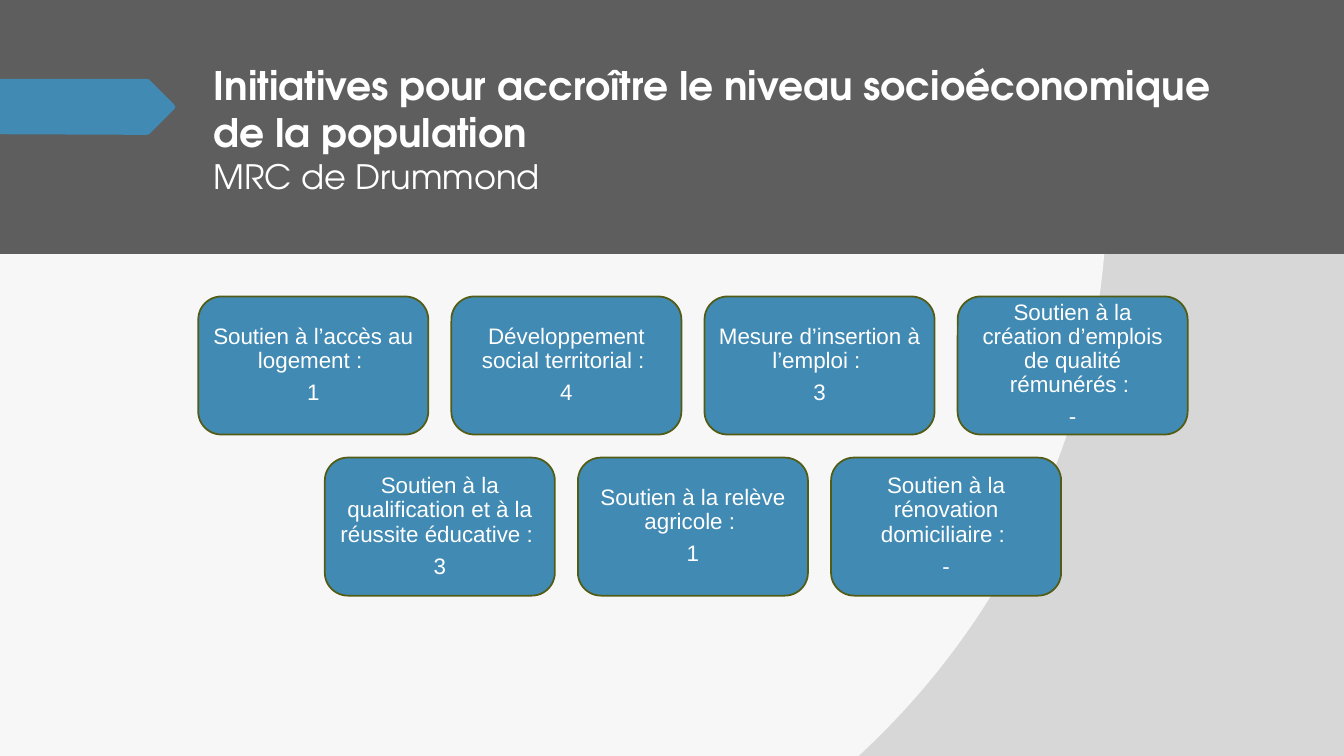
from copy import deepcopy
from dataclasses import dataclass

from pptx import Presentation
from pptx.dml.color import RGBColor
from pptx.enum.shapes import MSO_SHAPE
from pptx.enum.text import MSO_ANCHOR, MSO_AUTO_SIZE, PP_ALIGN
from pptx.oxml import parse_xml
from pptx.oxml.ns import nsdecls, qn
from pptx.shapes.autoshape import Shape
from pptx.slide import Slide
from pptx.text.text import _Paragraph, _Run
from pptx.util import Pt

COLORS = {
    "light": "F7F7F7",
    "shade": "D7D7D7",
    "banner": "5E5E5E",
    "accent": "418AB3",
    "outline": "535C14",
    "text": "FFFFFF",
}
TITLE_FONT = "TeX Gyre Adventor"
CARD_FONT = "Arial"

CARD_WIDTH, CARD_HEIGHT = 164.3, 98.6
CARD_GAP = 16.5
ROWS_CENTER, ROWS_TOP = 495, 211.8


@dataclass(frozen=True)
class Initiative:
    label: str
    count: str


INITIATIVE_ROWS = [
    [
        Initiative("Soutien à l’accès au logement : ", "1"),
        Initiative("Développement social territorial : ", "4"),
        Initiative("Mesure d’insertion à l’emploi : ", "3"),
        Initiative("Soutien à la création d’emplois de qualité rémunérés : ", "-"),
    ],
    [
        Initiative("Soutien à la qualification et à la réussite éducative : ", "3"),
        Initiative("Soutien à la relève agricole : ", "1"),
        Initiative("Soutien à la rénovation domiciliaire : ", "-"),
    ],
]

ARROW_OUTLINE = [
    (0, 56.3), (105, 56.3), (106.6, 56.9), (124.6, 74.9), (125.2, 76.3),
    (124.6, 77.8), (106.6, 95.8), (105, 96.3), (98, 96.3), (0, 95.9),
]


def rgb(name: str) -> RGBColor:
    return RGBColor.from_string(COLORS[name])


def paint(shape: Shape, fill: str) -> None:
    shape.shadow.inherit = False
    shape.fill.solid()
    shape.fill.fore_color.rgb = rgb(fill)
    shape.line.fill.background()


def add_text(paragraph: _Paragraph, text: str, font: str, size: float, bold: bool = False) -> _Run:
    run = paragraph.add_run()
    run.text = text
    run.font.name = font
    run.font.size = Pt(size)
    run.font.bold = bold
    run.font.color.rgb = rgb("text")
    return run


def set_background(slide: Slide) -> None:
    slide.background.fill.solid()
    solid = next(slide.element.iter(qn("a:solidFill")))
    gradient = parse_xml(
        f'<a:gradFill {nsdecls("a")} rotWithShape="1"><a:gsLst>'
        f'<a:gs pos="100000"><a:srgbClr val="{COLORS["light"]}"/></a:gs>'
        f'<a:gs pos="100000"><a:srgbClr val="{COLORS["shade"]}"/></a:gs>'
        '</a:gsLst><a:path path="circle">'
        '<a:fillToRect l="50000" t="50000" r="100000" b="100000"/>'
        '</a:path></a:gradFill>'
    )
    solid.getparent().replace(solid, gradient)


def add_banner(slide: Slide, width: float) -> None:
    banner = slide.shapes.add_shape(MSO_SHAPE.RECTANGLE, 0, 0, Pt(width), Pt(181.4))
    paint(banner, "banner")
    slide.shapes.title.element.addprevious(banner.element)


def fill_title(slide: Slide) -> None:
    title = slide.shapes.title
    title.left, title.top, title.width, title.height = Pt(145.4), Pt(40.3), Pt(738.7), Pt(114.5)
    frame = title.text_frame
    frame.auto_size = MSO_AUTO_SIZE.NONE
    frame.vertical_anchor = MSO_ANCHOR.TOP
    frame.word_wrap = True
    heading = frame.paragraphs[0]
    heading.alignment = PP_ALIGN.LEFT
    add_text(heading, "Initiatives pour accroître le niveau socioéconomique de la population",
             TITLE_FONT, 28, bold=True)
    heading.add_line_break()
    line_break = next(title.element.iter(qn("a:br")))
    line_break.append(deepcopy(next(title.element.iter(qn("a:rPr")))))
    add_text(heading, "MRC de Drummond", TITLE_FONT, 24)


def add_arrow(slide: Slide) -> None:
    start, *others = [(Pt(x), Pt(y)) for x, y in ARROW_OUTLINE]
    builder = slide.shapes.build_freeform(*start)
    builder.add_line_segments(others, close=True)
    paint(builder.convert_to_shape(), "accent")


def add_card(slide: Slide, initiative: Initiative, left: float, top: float) -> None:
    card = slide.shapes.add_shape(
        MSO_SHAPE.ROUNDED_RECTANGLE, Pt(left), Pt(top), Pt(CARD_WIDTH), Pt(CARD_HEIGHT))
    paint(card, "accent")
    card.line.color.rgb = rgb("outline")
    card.line.width = Pt(1.25)
    frame = card.text_frame
    frame.word_wrap = True
    frame.vertical_anchor = MSO_ANCHOR.MIDDLE
    frame.margin_left = frame.margin_right = frame.margin_top = frame.margin_bottom = Pt(4.8)
    for paragraph, text in (
        (frame.paragraphs[0], initiative.label),
        (frame.add_paragraph(), initiative.count),
    ):
        paragraph.alignment = PP_ALIGN.CENTER
        paragraph.line_spacing = 0.9
        paragraph.space_after = Pt(5.6)
        add_text(paragraph, text, CARD_FONT, 16)


def add_cards(slide: Slide) -> None:
    for row_index, row in enumerate(INITIATIVE_ROWS):
        row_width = len(row) * (CARD_WIDTH + CARD_GAP) - CARD_GAP
        row_left = ROWS_CENTER - row_width / 2
        top = ROWS_TOP + row_index * (CARD_HEIGHT + CARD_GAP)
        for column, initiative in enumerate(row):
            add_card(slide, initiative, row_left + column * (CARD_WIDTH + CARD_GAP), top)


def main() -> None:
    presentation = Presentation()
    presentation.slide_width, presentation.slide_height = Pt(960), Pt(540)
    slide = presentation.slides.add_slide(presentation.slide_layouts.get_by_name("Title Only"))
    set_background(slide)
    add_banner(slide, 960)
    fill_title(slide)
    add_arrow(slide)
    add_cards(slide)
    presentation.save("out.pptx")


if __name__ == "__main__":
    main()
